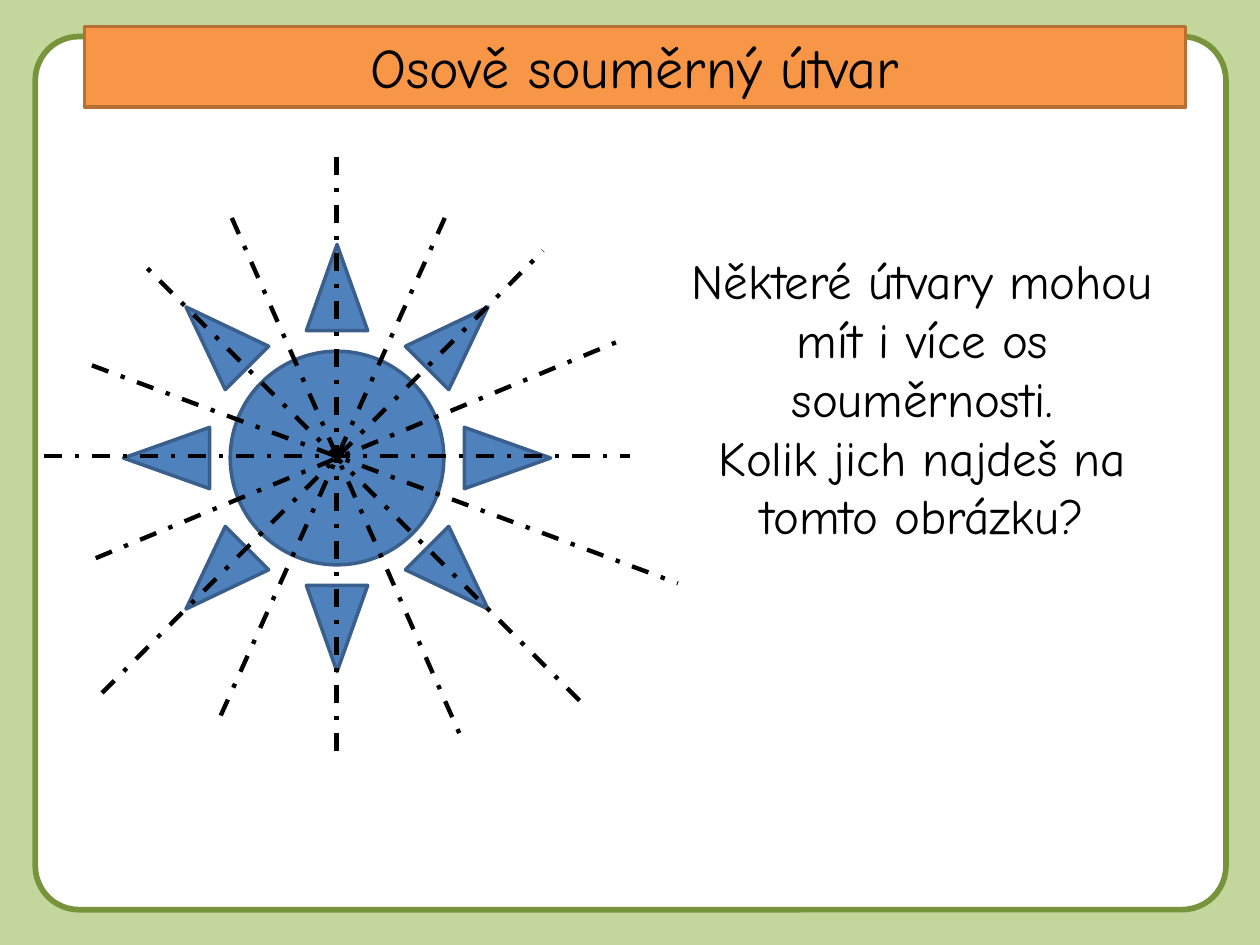
from dataclasses import dataclass

from lxml.etree import SubElement
from pptx import Presentation
from pptx.dml.color import RGBColor as Color
from pptx.enum.dml import MSO_LINE_DASH_STYLE as Dash
from pptx.enum.shapes import MSO_CONNECTOR as Connector, MSO_SHAPE as Shape
from pptx.enum.text import MSO_ANCHOR as Anchor, MSO_AUTO_SIZE as AutoSize, PP_ALIGN as Align
from pptx.oxml.ns import qn
from pptx.util import Inches, Pt


@dataclass(frozen=True)
class Theme:
    """Colours, font and sizes of the slide."""
    background: str = "C3D69B"
    panel: str = "FFFFFF"
    panel_line: str = "77933C"
    banner: str = "F79646"
    banner_line: str = "B76F34"
    sun: str = "4F81BD"
    sun_line: str = "3A5F8C"
    ink: str = "000000"
    font: str = "Comic Neue"
    title_size: int = 32
    body_size: int = 28
    panel_width: float = 3.25
    outline_width: float = 2
    axis_width: float = 2.5


THEME = Theme()
TITLE = "Osově souměrný útvar"
QUESTION = (
    "Některé útvary mohou mít i více os souměrnosti.",
    "Kolik jich najdeš na tomto obrázku?",
)
AXES = (
    (2.67, 5.96, 2.67, 1.19),
    (0.81, 5.5, 4.31, 1.99),
    (4.6, 5.56, 1.14, 2.1),
    (0.35, 3.62, 5, 3.62),
    (0.73, 2.9, 5.38, 4.63),
    (1.84, 1.73, 3.65, 5.83),
    (0.76, 4.43, 4.93, 2.7),
    (3.53, 1.73, 1.72, 5.75),
)


def set_attributes(target, values):
    """Set each named attribute of the target."""
    for name, value in values.items():
        setattr(target, name, value)


def place(shape, box):
    """Move and size a shape to a box in inches."""
    names = ("left", "top", "width", "height")
    set_attributes(shape, dict(zip(names, map(Inches, box))))


def paint(shape, fill, line, width):
    """Give a shape a solid fill and outline."""
    shape.fill.solid()
    shape.fill.fore_color.rgb = Color.from_string(fill)
    shape.line.color.rgb = Color.from_string(line)
    shape.line.width = Pt(width)


def write(shape, lines, size, anchor=Anchor.TOP):
    """Write centred paragraphs into a shape."""
    frame = shape.text_frame
    frame.text = "\n".join(lines)
    set_attributes(frame, {"word_wrap": True, "auto_size": AutoSize.NONE, "vertical_anchor": anchor})
    for paragraph in frame.paragraphs:
        set_attributes(paragraph, {"alignment": Align.CENTER, "space_before": Pt(0)})
        set_attributes(paragraph.font, {"name": THEME.font, "size": Pt(size)})
        paragraph.font.color.rgb = Color.from_string(THEME.ink)


def add_preset(slide, preset, box, fill, line, width):
    """Add a painted preset shape without shadow."""
    shape = slide.shapes.add_shape(preset, *map(Inches, box))
    shape.shadow.inherit = False
    paint(shape, fill, line, width)
    return shape


def add_panel(slide, box):
    """Add the rounded white panel."""
    panel = add_preset(slide, Shape.ROUNDED_RECTANGLE, box,
                       THEME.panel, THEME.panel_line, THEME.panel_width)
    panel.adjustments[0] = 0.05


def add_banner(slide, box):
    """Turn the title into the banner above the panel."""
    title = slide.shapes.title
    place(title, box)
    paint(title, THEME.banner, THEME.banner_line, THEME.outline_width)
    write(title, [TITLE], THEME.title_size)
    slide.shapes._spTree.append(title._element)


def add_question(slide, box):
    """Add the question beside the sun."""
    question = slide.shapes.add_textbox(*map(Inches, box))
    question.fill.solid()
    question.fill.fore_color.rgb = Color.from_string(THEME.panel)
    write(question, QUESTION, THEME.body_size)


def add_axis(slide, ends):
    """Add one dash-dot axis of symmetry."""
    axis = slide.shapes.add_connector(Connector.STRAIGHT, *map(Inches, ends))
    axis.line.color.rgb = Color.from_string(THEME.ink)
    set_attributes(axis.line, {"width": Pt(THEME.axis_width), "dash_style": Dash.DASH_DOT})
    SubElement(axis._element.spPr, qn("a:effectLst"))


def add_sun(slide, box):
    """Add the sun and its axes."""
    add_preset(slide, Shape.SUN, box, THEME.sun, THEME.sun_line, THEME.outline_width)
    for ends in AXES:
        add_axis(slide, ends)


def main():
    """Build and save the slide."""
    presentation = Presentation()
    set_attributes(presentation, {"slide_width": Inches(10), "slide_height": Inches(7.5)})
    slide = presentation.slides.add_slide(presentation.slide_layouts[5])
    slide.background.fill.solid()
    slide.background.fill.fore_color.rgb = Color.from_string(THEME.background)
    add_panel(slide, (0.28, 0.29, 9.45, 6.93))
    add_banner(slide, (0.67, 0.21, 8.74, 0.64))
    add_question(slide, (5.31, 1.94, 4.02, 2.46))
    add_sun(slide, (0.98, 1.94, 3.39, 3.39))
    presentation.save("out.pptx")


if __name__ == "__main__":
    main()
